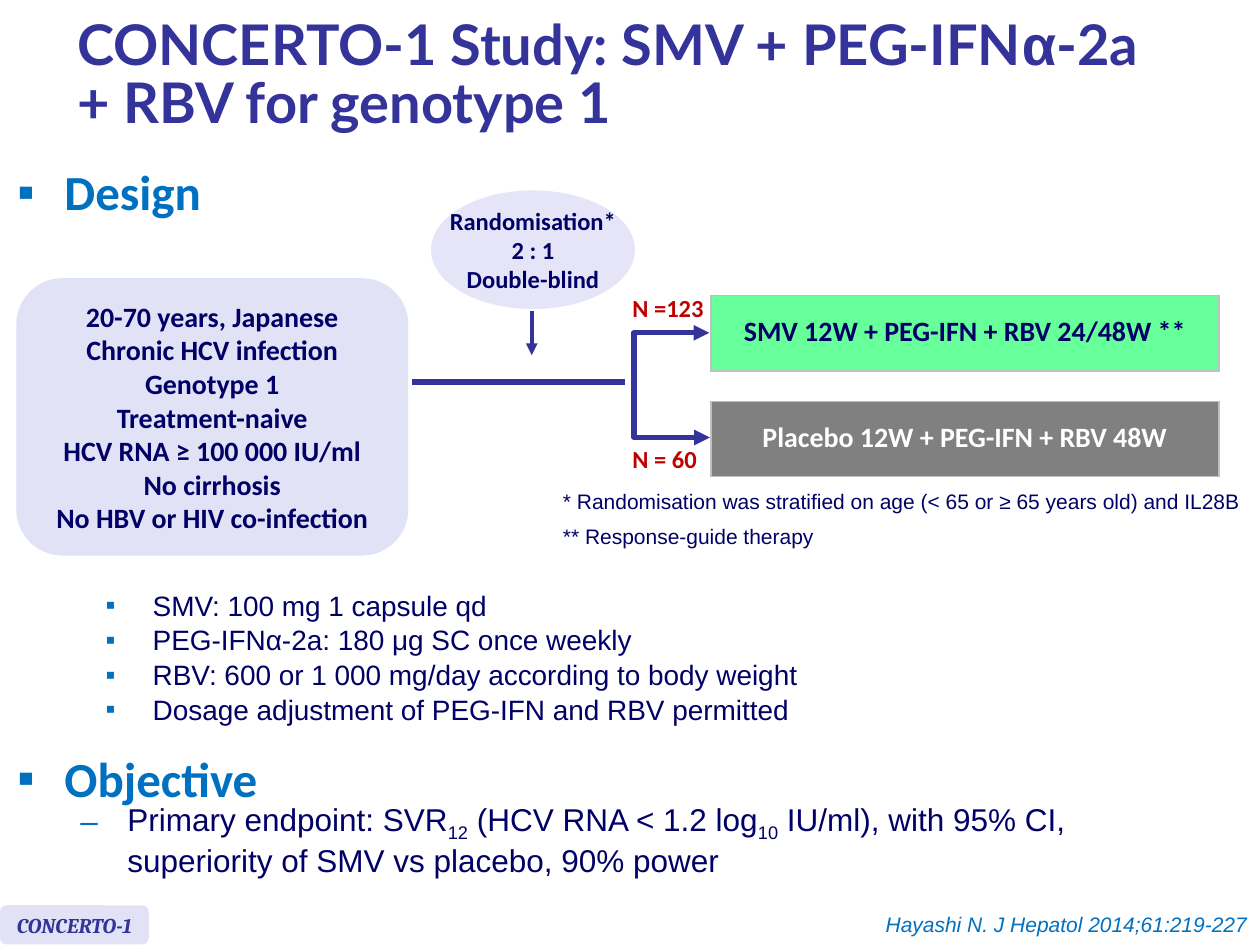
from copy import deepcopy
from dataclasses import dataclass

from lxml import etree
from pptx import Presentation
from pptx.dml.color import RGBColor
from pptx.enum.shapes import MSO_CONNECTOR, MSO_SHAPE
from pptx.enum.text import MSO_ANCHOR, PP_ALIGN
from pptx.oxml.ns import qn
from pptx.util import Cm, Pt

LEFT, CENTER, RIGHT = PP_ALIGN.LEFT, PP_ALIGN.CENTER, PP_ALIGN.RIGHT
TOP, MIDDLE = MSO_ANCHOR.TOP, MSO_ANCHOR.MIDDLE
OVAL, ROUND = MSO_SHAPE.OVAL, MSO_SHAPE.ROUNDED_RECTANGLE
STRAIGHT, ELBOW = MSO_CONNECTOR.STRAIGHT, MSO_CONNECTOR.ELBOW


@dataclass(frozen=True)
class Theme:
    """Colours and type styles (font, size, colour, bold, italic)."""
    blue: str = "0070C0"
    indigo: str = "333399"
    pale: str = "E2E2F6"
    oval: str = "E5E5F7"
    green: str = "66FF99"
    gray: str = "808080"
    silver: str = "C0C0C0"
    title: tuple = ("Lato", 32, "333399", True, False)
    head: tuple = ("Calibri", 28, "0070C0", True, False)
    box: tuple = ("Calibri", 16, "000066", True, False)
    light: tuple = ("Calibri", 16, "FFFFFF", True, False)
    small: tuple = ("Calibri", 14, "000066", True, False)
    count: tuple = ("Calibri", 14, "C00000", True, False)
    item: tuple = ("Arial", 16, "000066", False, False)
    body: tuple = ("Arial", 18, "000066", False, False)
    note: tuple = ("Arial", 12, "000066", False, False)
    tag: tuple = ("Cambria", 12, "333399", True, True)
    cite: tuple = ("Arial", 12, "0070C0", False, True)


THEME = Theme()


def rgb(code):
    """Turn a hex code into a colour."""
    return RGBColor.from_string(code)


def place(box, x, y, w, h):
    """Return lengths for an area relative to a box."""
    return Cm(box[0] + x), Cm(box[1] + y), Cm(w), Cm(h)


def style(para, look):
    """Format the runs and line breaks of a paragraph."""
    name, size, color, bold, slant = look
    for run in para.runs:
        font = run.font
        font.name, font.size, font.bold, font.italic = name, Pt(size), bold, slant
        font.color.rgb = rgb(color)
    for br in para._p.findall(qn("a:br")):
        br.append(deepcopy(para.runs[0]._r.rPr))


def write(frame, text, look, align=LEFT, anchor=TOP, wrap=True):
    """Fill a text frame with evenly styled paragraphs."""
    frame.text = text
    frame.word_wrap = wrap
    frame.vertical_anchor = anchor
    for para in frame.paragraphs:
        para.alignment = align
        style(para, look)
    return frame


def label(slide, area, text, look, align=LEFT, wrap=True):
    """Add a text box."""
    return write(slide.shapes.add_textbox(*area).text_frame, text, look, align, TOP, wrap)


def bullet(para, mark, left):
    """Give a paragraph a coloured bullet and hanging indent."""
    props = para._p.get_or_add_pPr()
    props.set("marL", str(Cm(left)))
    props.set("indent", str(-Cm(0.95)))
    color = etree.SubElement(props, qn("a:buClr"))
    etree.SubElement(color, qn("a:srgbClr"), val=THEME.blue)
    etree.SubElement(props, qn("a:buFont"), typeface="Arial")
    etree.SubElement(props, qn("a:buChar"), char=mark)


def panel(slide, kind, area, fill, text, look, wrap=True):
    """Add a filled shape with centred text."""
    shape = slide.shapes.add_shape(kind, *area)
    shape.shadow.inherit = False
    shape.fill.solid()
    shape.fill.fore_color.rgb = rgb(fill)
    shape.line.fill.background()
    return write(shape.text_frame, text, look, CENTER, MIDDLE, wrap)


def link(slide, box, kind, ends, width, heads=()):
    """Add a connector with the named arrowheads."""
    x, y, u, v = ends
    start, stop = place(box, x, y, 0, 0), place(box, u, v, 0, 0)
    line = slide.shapes.add_connector(kind, *start[:2], *stop[:2])
    line.line.color.rgb = rgb(THEME.indigo)
    line.line.width = Pt(width)
    for head in heads:
        etree.SubElement(line.line._get_or_add_ln(), qn(head), type="triangle")
    etree.SubElement(line._element.spPr, qn("a:effectLst"))
    return line


def fork(slide, box, x, top, low, reach):
    """Add a two-headed bracket that opens to the right."""
    gap = 0.01
    line = link(slide, box, ELBOW, (x + gap, low, x, top), 3, ("a:headEnd", "a:tailEnd"))
    props = line._element.spPr
    props.find(qn("a:xfrm")).set("rot", "10800000")
    guides = props.find(qn("a:prstGeom")).get_or_add_avLst()
    value = round(-reach / gap * 100000)
    etree.SubElement(guides, qn("a:gd"), name="adj1", fmla=f"val {value}")


def arm(slide, area, text, fill, look):
    """Add a one-cell table for a treatment arm."""
    table = slide.shapes.add_table(1, 1, *area).table
    table.first_row = table.horz_banding = False
    cell = table.cell(0, 0)
    write(cell.text_frame, text, look, CENTER)
    cell.text_frame.paragraphs[0].line_spacing = 0.8
    cell.vertical_anchor = MIDDLE
    props = cell._tc.get_or_add_tcPr()
    for side in ("a:lnL", "a:lnR", "a:lnT", "a:lnB"):
        edge = etree.SubElement(props, qn(side), w=str(Pt(1)))
        paint = etree.SubElement(edge, qn("a:solidFill"))
        etree.SubElement(paint, qn("a:srgbClr"), val=THEME.silver)
    cell.fill.solid()
    cell.fill.fore_color.rgb = rgb(fill)


def heading(slide, box):
    """Place and format the slide title."""
    title = slide.shapes.title
    title.left, title.top, title.width, title.height = place(box, 0, 0, *box[2:])
    para = title.text_frame.paragraphs[0]
    title.text_frame.vertical_anchor = MIDDLE
    for part in ("CONCERTO-1 Study: SMV + PEG-IFN", "α", "-2a "):
        para.add_run().text = part
    para.add_line_break()
    para.add_run().text = "+ RBV for genotype 1"
    para.alignment, para.line_spacing = LEFT, 0.85
    style(para, THEME.title)
    para.runs[1].font.name = "Arial"


def design(slide, box):
    """Draw the study design diagram with its notes."""
    frame = label(slide, place(box, 0, 0.04, 5, 1.6), "Design", THEME.head)
    bullet(frame.paragraphs[0], "▪", 0.95)
    link(slide, box, STRAIGHT, (10.62, 3.17, 10.62, 4.06), 2.25, ("a:tailEnd",))
    arms = (
        ("SMV 12W + PEG-IFN + RBV 24/48W **", THEME.green, THEME.box, "N =123", 2.69),
        ("Placebo 12W + PEG-IFN + RBV 48W", THEME.gray, THEME.light, "N = 60", 5.72),
    )
    for row, (text, fill, look, count, y) in enumerate(arms):
        arm(slide, place(box, 14.23, 2.86 + row * 2.13, 10.24, 1.52), text, fill, look)
        label(slide, place(box, 12.4, y, 2.2, 0.86), count, THEME.count, LEFT, False)
    frame = panel(slide, OVAL, place(box, 8.59, 0.74, 4.11, 2.39), THEME.oval,
                  "Randomisation*\n2 : 1\nDouble-blind", THEME.small, False)
    frame.margin_left = frame.margin_right = frame.margin_top = frame.margin_bottom = 0
    link(slide, box, STRAIGHT, (8.21, 4.6, 12.5, 4.6), 3)
    panel(slide, ROUND, place(box, 0.23, 2.51, 7.9, 5.59), THEME.pale,
          "20-70 years, Japanese\nChronic HCV infection\nGenotype 1\nTreatment-naive\n"
          "HCV RNA ≥ 100 000 IU/ml\nNo cirrhosis\nNo HBV or HIV co-infection", THEME.box)
    fork(slide, box, 14.2, 3.61, 5.72, 1.52)
    notes = ("* Randomisation was stratified on age (< 65 or ≥ 65 years old) and IL28B",
             "** Response-guide therapy")
    for row, text in enumerate(notes):
        label(slide, place(box, 11, 6.63 + row * 0.69, 14.3, 0.76), text, THEME.note, LEFT, False)


def dosing(slide, box):
    """List the drug doses."""
    frame = label(slide, place(box, 0, 0, *box[2:]),
                  "SMV: 100 mg 1 capsule qd\nPEG-IFNα-2a: 180 μg SC once weekly\n"
                  "RBV: 600 or 1 000 mg/day according to body weight\n"
                  "Dosage adjustment of PEG-IFN and RBV permitted", THEME.item)
    for row, para in enumerate(frame.paragraphs):
        para.level = 1
        if row:
            para.space_before = Pt(0.7)
        bullet(para, "▪", 2.22)


def goal(slide, box):
    """State the objective and its endpoint."""
    frame = label(slide, place(box, 0, 0, *box[2:]), "Objective", THEME.head)
    first, para = frame.paragraphs[0], frame.add_paragraph()
    parts = ("Primary endpoint: SVR", "12", " (HCV RNA < 1.2 log", "10",
             " IU/ml), with 95% CI, ")
    for part in parts:
        para.add_run().text = part
    para.add_line_break()
    para.add_run().text = "superiority of SMV vs placebo, 90% power"
    para.level = 1
    style(para, THEME.body)
    for run in para.runs[1:4:2]:
        run.font._element.set("baseline", "-25000")
    for item, mark, left in ((first, "▪", 0.95), (para, "–", 2.22)):
        item.line_spacing = Pt(20.6)
        bullet(item, mark, left)


def footer(slide, box):
    """Place the study tag and the citation."""
    panel(slide, ROUND, place(box, 0, 0, 3, 0.79), THEME.pale, "CONCERTO-1", THEME.tag, False)
    label(slide, place(box, 17.45, 0, 7.95, 0.76),
          "Hayashi N. J Hepatol 2014;61:219-227", THEME.cite, RIGHT, False)


def main():
    """Build and save the slide."""
    deck = Presentation()
    deck.slide_width, deck.slide_height = Cm(25.4), Cm(19.05)
    slide = deck.slides.add_slide(deck.slide_layouts[5])
    heading(slide, (1.3, 0.2, 23.19, 2.72))
    design(slide, (0.1, 3.1, 25.3, 8.2))
    dosing(slide, (0.61, 11.73, 24.05, 3.07))
    goal(slide, (0.1, 15.42, 24.94, 2.64))
    footer(slide, (0, 18.25, 25.4, 0.8))
    deck.save("out.pptx")


if __name__ == "__main__":
    main()
